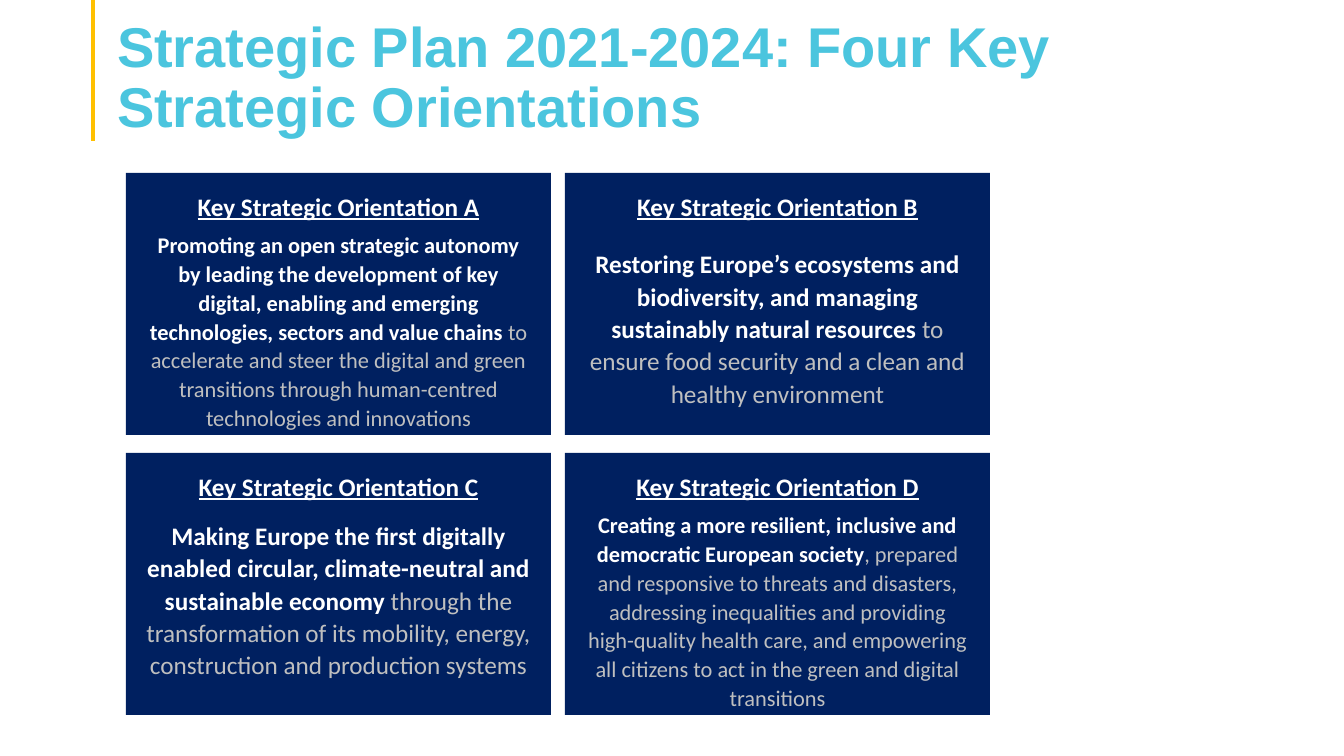
from pptx import Presentation
from pptx.dml.color import RGBColor
from pptx.enum.shapes import MSO_CONNECTOR, MSO_SHAPE
from pptx.enum.text import MSO_ANCHOR, MSO_AUTO_SIZE, PP_ALIGN
from pptx.util import Emu, Pt
from lxml.etree import SubElement
from pptx.oxml.ns import qn

COLORS = {"title": "4BC5DE", "accent": "FFC000", "card": "002060",
          "bold": "FFFFFF", "plain": "BFBFBF"}

# letter, space after heading, body size, bold text, plain text
ORIENTATIONS = [
    ("A", 6, 16,
     "Promoting an open strategic autonomy by leading the development of key digital, "
     "enabling and emerging technologies, sectors and value chains ",
     "to accelerate and steer the digital and green transitions through human-centred "
     "technologies and innovations"),
    ("B", 18, 18,
     "Restoring Europe’s ecosystems and biodiversity, and managing sustainably natural resources ",
     "to ensure food security and a clean and healthy environment"),
    ("C", 12, 18,
     "Making Europe the first digitally enabled circular, climate-neutral and sustainable economy ",
     "through the transformation of its mobility, energy, construction and production systems"),
    ("D", 6, 16,
     "Creating a more resilient, inclusive and democratic European society",
     ", prepared and responsive to threats and disasters, addressing inequalities and providing "
     "high-quality health care, and empowering all citizens to act in the green and digital "
     "transitions"),
]


def px(length):
    return Emu(round(length * 914400 / 100.8))


def add_run(paragraph, text, color, **font_format):
    run = paragraph.add_run()
    run.text = text
    run.font.color.rgb = RGBColor.from_string(COLORS[color])
    for name, value in font_format.items():
        setattr(run.font, name, value)


presentation = Presentation()
presentation.slide_width = px(1344)
presentation.slide_height = px(756)
slide = presentation.slides.add_slide(presentation.slide_layouts[5])

accent = slide.shapes.add_connector(MSO_CONNECTOR.STRAIGHT, px(93), px(0), px(93), px(141))
accent.line.color.rgb = RGBColor.from_string(COLORS["accent"])
accent.line.width = Pt(2.25)
SubElement(accent.element.spPr, qn("a:effectLst"))

title = slide.shapes.title
title.left, title.top, title.width, title.height = px(107), px(53), px(1159), px(87)
title_format = {"word_wrap": True, "auto_size": MSO_AUTO_SIZE.NONE,
                "vertical_anchor": MSO_ANCHOR.BOTTOM, "margin_bottom": 0}
for name, value in title_format.items():
    setattr(title.text_frame, name, value)
paragraph = title.text_frame.paragraphs[0]
paragraph.alignment = PP_ALIGN.LEFT
paragraph.line_spacing = 0.9
paragraph.space_before = Pt(0)
add_run(paragraph, "Strategic Plan 2021-2024: Four Key Strategic Orientations", "title",
        name="Arial", size=Pt(40), bold=True)

card_format = {"word_wrap": True, "vertical_anchor": MSO_ANCHOR.TOP, "margin_left": px(20),
               "margin_top": px(16), "margin_right": px(20), "margin_bottom": px(5)}
for index, (letter, gap, size, bold_text, plain_text) in enumerate(ORIENTATIONS):
    row, column = divmod(index, 2)
    card = slide.shapes.add_shape(MSO_SHAPE.RECTANGLE, px(126 + column * 439),
                                  px(173 + row * 280), px(425), px(262))
    card.shadow.inherit = False
    card.fill.solid()
    card.fill.fore_color.rgb = RGBColor.from_string(COLORS["card"])
    card.line.fill.background()
    frame = card.text_frame
    for name, value in card_format.items():
        setattr(frame, name, value)

    heading, body = frame.paragraphs[0], frame.add_paragraph()
    for paragraph in (heading, body):
        paragraph.alignment = PP_ALIGN.CENTER
        paragraph.line_spacing = 1.07
    heading.space_after = Pt(gap)
    add_run(heading, f"Key Strategic Orientation {letter}", "bold",
            name="Calibri", size=Pt(18), bold=True, underline=True)
    add_run(body, bold_text, "bold", name="Calibri", size=Pt(size), bold=True)
    add_run(body, plain_text, "plain", name="Calibri", size=Pt(size), bold=False)

presentation.save("out.pptx")
